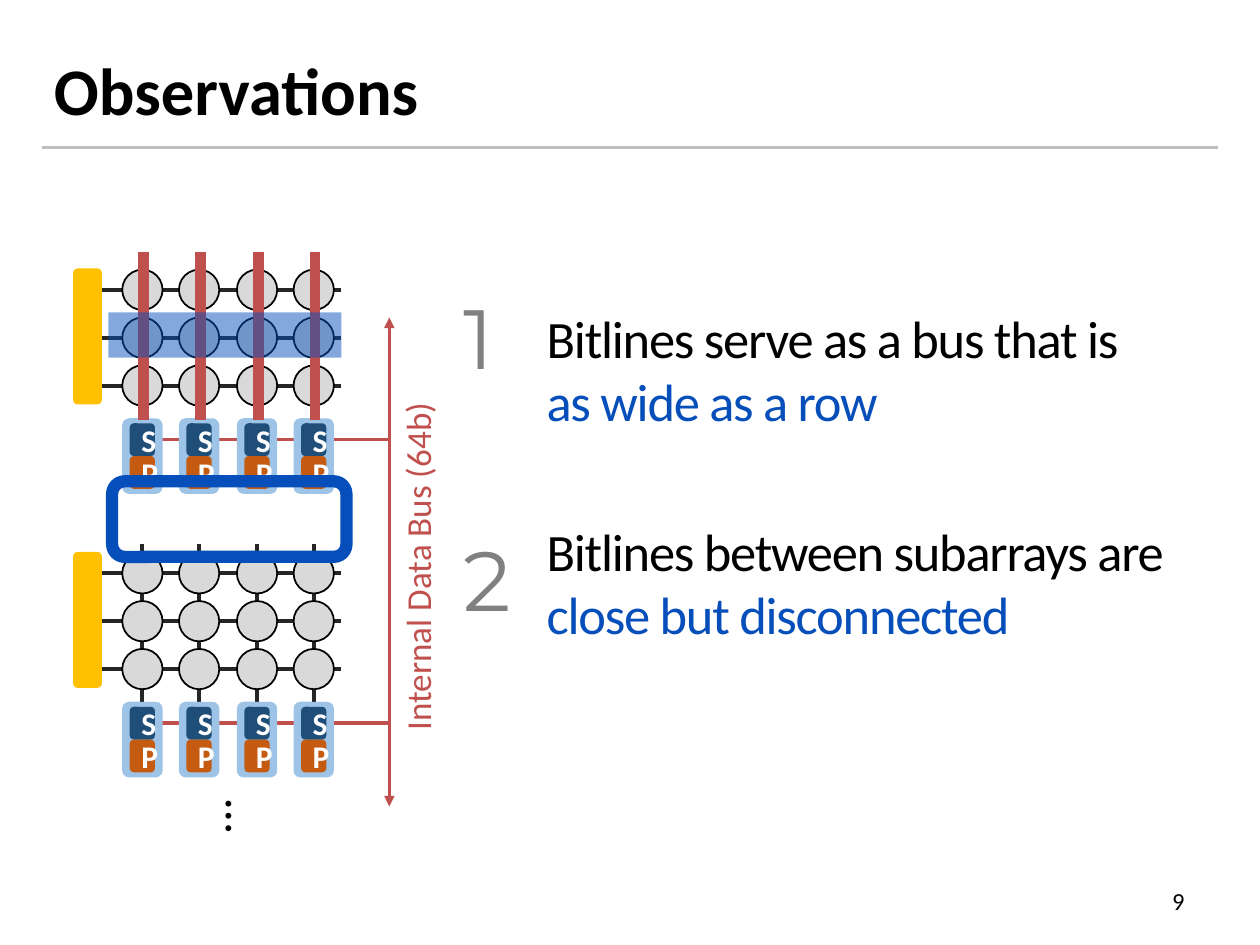
from lxml.etree import SubElement
from pptx import Presentation
from pptx.dml.color import RGBColor
from pptx.enum.shapes import MSO_CONNECTOR, MSO_SHAPE
from pptx.enum.text import MSO_ANCHOR, MSO_AUTO_SIZE, PP_ALIGN
from pptx.oxml.ns import qn
from pptx.util import Inches, Pt

COLORS = {
    "black": "000000", "white": "FFFFFF", "gray": "808080", "rule": "BFBFBF",
    "wire": "262626", "cell": "D9D9D9", "bus": "C0504D", "decoder": "FFC000",
    "buffer": "9DC3E6", "sense": "1F4E79", "precharge": "C55A11", "accent": "064FBA",
}
COLUMNS = [1.13, 1.58, 2.04, 2.49]
ROWS = [0.23, 0.61, 0.99]
SUBARRAYS = [2.07, 4.32]


class SlideBuilder:
    """Draws styled elements on the current slide."""

    def __init__(self, slide, font="Calibri"):
        self.slide = slide
        self.font = font

    def color(self, name):
        return RGBColor.from_string(COLORS[name])

    def line(self, start, end, color, width, arrows=False):
        connector = self.slide.shapes.add_connector(
            MSO_CONNECTOR.STRAIGHT, *map(Inches, (*start, *end)))
        connector.line.color.rgb = self.color(color)
        connector.line.width = Pt(width)
        properties = connector._element.spPr
        if arrows:
            outline = properties.find(qn("a:ln"))
            for tag in ("a:headEnd", "a:tailEnd"):
                SubElement(outline, qn(tag), type="triangle")
        SubElement(properties, qn("a:effectLst"))

    def shape(self, kind, box, fill=None, line=None, width=1, alpha=None):
        shape = self.slide.shapes.add_shape(kind, *map(Inches, box))
        shape.shadow.inherit = False
        if fill:
            shape.fill.solid()
            shape.fill.fore_color.rgb = self.color(fill)
        else:
            shape.fill.background()
        if line:
            shape.line.color.rgb = self.color(line)
            shape.line.width = Pt(width)
        else:
            shape.line.fill.background()
        if alpha:
            color = shape._element.spPr.find(qn("a:solidFill"))[0]
            SubElement(color, qn("a:alpha"), val=str(alpha * 1000))
        return shape

    def format_run(self, run, size, color, bold=False, font=None):
        run.font.name = font or self.font
        run.font.size = Pt(size)
        run.font.bold = bold
        run.font.color.rgb = self.color(color)

    def label(self, box, text, fill):
        shape = self.shape(MSO_SHAPE.ROUNDED_RECTANGLE, box, fill)
        shape.text_frame.text = text
        shape.text_frame.vertical_anchor = MSO_ANCHOR.MIDDLE
        paragraph = shape.text_frame.paragraphs[0]
        paragraph.alignment = PP_ALIGN.CENTER
        self.format_run(paragraph.runs[0], 18, "white", bold=True)

    def text(self, box, text, size, color="black", bold=False, font=None, align=PP_ALIGN.LEFT,
             anchor=MSO_ANCHOR.TOP, wrap=True, grow=False, rotation=0):
        shape = self.slide.shapes.add_textbox(*map(Inches, box))
        shape.rotation = rotation
        frame = shape.text_frame
        frame.word_wrap = wrap
        frame.vertical_anchor = anchor
        if grow:
            frame.auto_size = MSO_AUTO_SIZE.SHAPE_TO_FIT_TEXT
        frame.text = text
        paragraph = frame.paragraphs[0]
        paragraph.alignment = align
        self.format_run(paragraph.runs[0], size, color, bold, font)
        return paragraph

    def observation(self, box, number_top, number, lead, highlight, line_break=False):
        paragraph = self.text(box, lead, 30, grow=True)
        if line_break:
            paragraph.add_line_break()
        run = paragraph.add_run()
        run.text = highlight
        self.format_run(run, 30, "accent")
        for run in paragraph.runs:
            run.font._element.set("spc", "-70")
        self.text((3.58, number_top, 0.65, 0.91), number, 48, "gray",
                  font="Montserrat", wrap=False, grow=True)

    def subarray(self, top):
        for x in COLUMNS:
            self.line((x, top), (x, top + 1.25), "wire", 2.25)
        self.shape(MSO_SHAPE.ROUNDED_RECTANGLE, (0.58, top + 0.06, 0.23, 1.08), "decoder")
        for row in ROWS:
            self.line((0.81, top + row), (2.71, top + row), "wire", 2.25)
        for x in COLUMNS:
            self.shape(MSO_SHAPE.ROUNDED_RECTANGLE, (x - 0.16, top + 1.25, 0.32, 0.6), "buffer")
            self.label((x - 0.1, top + 1.29, 0.2, 0.26), "S", "sense")
            self.label((x - 0.1, top + 1.55, 0.2, 0.26), "P", "precharge")
            for row in ROWS:
                self.shape(MSO_SHAPE.OVAL, (x - 0.16, top + row - 0.16, 0.32, 0.32),
                           "cell", "black")


def main():
    presentation = Presentation()
    presentation.slide_width = Inches(10)
    presentation.slide_height = Inches(7.5)
    builder = SlideBuilder(presentation.slides.add_slide(presentation.slide_layouts[6]))

    builder.line((0.33, 1.17), (9.67, 1.17), "rule", 1.5)
    builder.text((0.33, 0.08, 9.33, 1.25), "Observations", 38, bold=True,
                 anchor=MSO_ANCHOR.MIDDLE)
    builder.text((7.17, 6.95, 2.33, 0.4), "9", 14, align=PP_ALIGN.RIGHT,
                 anchor=MSO_ANCHOR.MIDDLE)

    builder.line((3.09, 6.4), (3.09, 2.52), "bus", 2, arrows=True)
    for top in SUBARRAYS:
        builder.line((3.09, top + 1.42), (1.02, top + 1.42), "bus", 2)
    for top in SUBARRAYS:
        builder.subarray(top)
    builder.text((1.65, 6.26, 0.59, 0.57), "…", 28, wrap=False, grow=True, rotation=90)

    for x in COLUMNS:
        builder.line((x + 0.01, 2), (x + 0.01, 3.33), "bus", 6)
    builder.shape(MSO_SHAPE.RECTANGLE, (0.86, 2.48, 1.85, 0.36), "accent", alpha=49)

    builder.observation((4.24, 2.38, 5.35, 1.11), 2.22, "1",
                        "Bitlines serve as a bus that is ", "as wide as a row", line_break=True)
    builder.observation((4.24, 4.07, 5.76, 1.11), 4.14, "2",
                        "Bitlines between subarrays are", " close but disconnected")
    builder.shape(MSO_SHAPE.ROUNDED_RECTANGLE, (0.89, 3.82, 1.86, 0.6), line="accent", width=7)
    builder.text((1.89, 4.25, 2.85, 0.44), "Internal Data Bus (64b)", 20, "bus",
                 wrap=False, grow=True, rotation=270)

    presentation.save("out.pptx")


if __name__ == "__main__":
    main()
